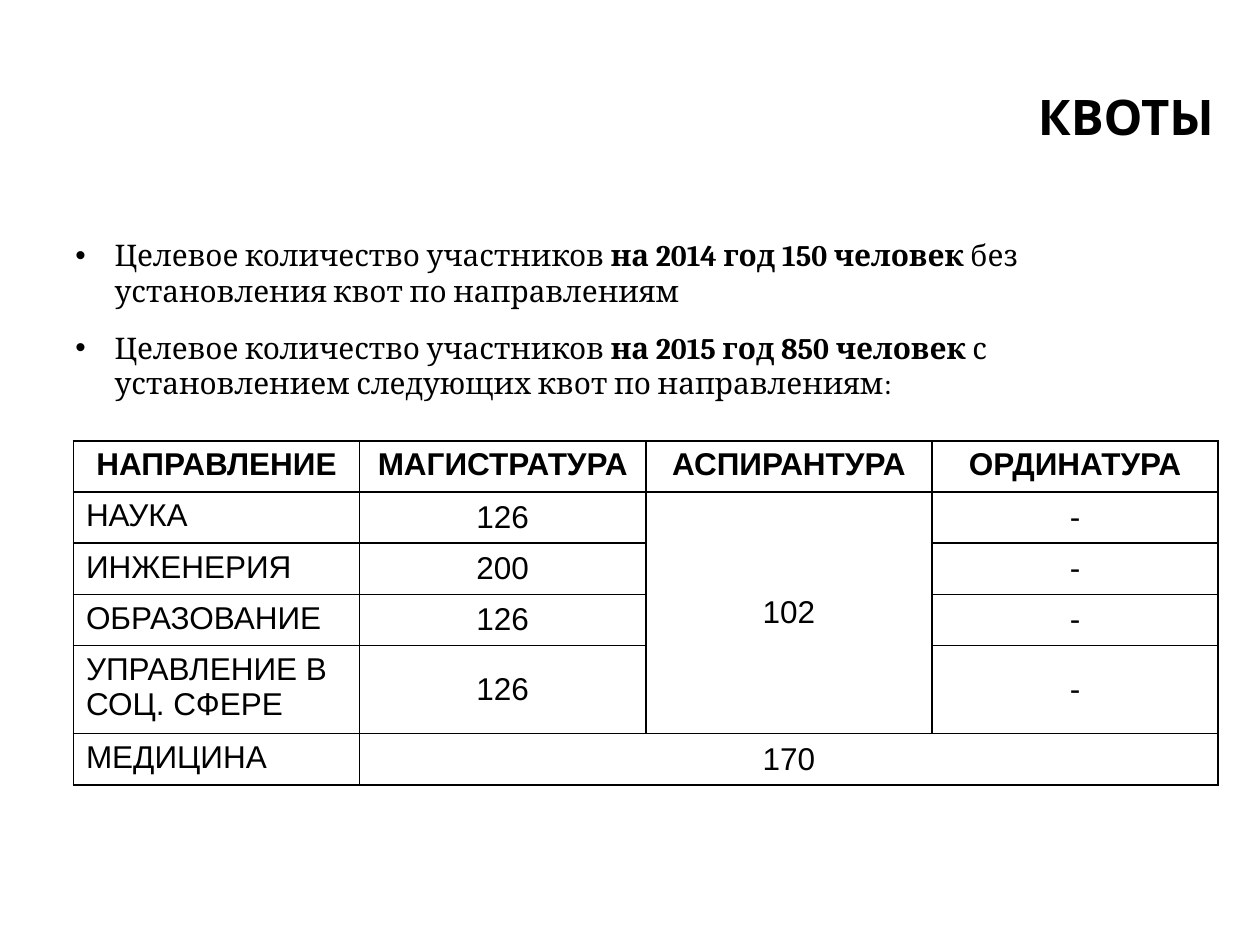
from lxml import etree
from pptx import Presentation
from pptx.dml.color import RGBColor
from pptx.enum import text
from pptx.oxml import ns
from pptx.util import Cm, Pt

BLACK = RGBColor(0, 0, 0)
LEFT, CENTER, RIGHT = text.PP_ALIGN.LEFT, text.PP_ALIGN.CENTER, text.PP_ALIGN.RIGHT

TITLE = "КВОТЫ"
BULLETS = [
    [("Целевое количество участников ", False),
     ("на 2014 год 150 человек ", True),
     ("без установления квот по направлениям", False)],
    [("Целевое количество участников ", False),
     ("на 2015 год 850 человек ", True),
     ("с установлением следующих квот по направлениям:", False)],
]
QUOTAS = [
    ["НАПРАВЛЕНИЕ", "МАГИСТРАТУРА", "АСПИРАНТУРА", "ОРДИНАТУРА"],
    ["НАУКА", "126", "102", "-"],
    ["ИНЖЕНЕРИЯ", "200", "", "-"],
    ["ОБРАЗОВАНИЕ", "126", "", "-"],
    ["УПРАВЛЕНИЕ В СОЦ. СФЕРЕ", "126", "", "-"],
    ["МЕДИЦИНА", "170", "", ""],
]
MERGES = [((1, 2), (4, 2)), ((5, 1), (5, 3))]
ROW_HEIGHTS = [1.03, 1.03, 1.03, 1.03, 1.78, 1.03]
COLUMN_WIDTH = 5.77


def add_span(para, words, font, size, bold):
    span = para.add_run()
    span.text = words
    span.font.name = font
    span.font.size = Pt(size)
    span.font.bold = bold
    span.font.color.rgb = BLACK


def add_box(page, left, top, width, height):
    frame = page.shapes.add_textbox(Cm(left), Cm(top), Cm(width), Cm(height)).text_frame
    frame.word_wrap = True
    return frame


def add_bullet(para):
    props = para._p.get_or_add_pPr()
    props.set("marL", str(Cm(0.79)))
    props.set("indent", str(-Cm(0.79)))
    etree.SubElement(props, ns.qn("a:buFont")).set("typeface", "Arial")
    etree.SubElement(props, ns.qn("a:buChar")).set("char", "•")


def add_borders(cell):
    props = cell._tc.get_or_add_tcPr()
    for index, side in enumerate(("lnL", "lnR", "lnT", "lnB")):
        line = etree.Element(ns.qn("a:" + side), w=str(Pt(1)))
        fill = etree.SubElement(line, ns.qn("a:solidFill"))
        etree.SubElement(fill, ns.qn("a:srgbClr")).set("val", str(BLACK))
        props.insert(index, line)


def add_title(page):
    frame = add_box(page, 5.72, 1.57, 19, 1.55)
    frame.vertical_anchor = text.MSO_ANCHOR.MIDDLE
    para = frame.paragraphs[0]
    para.alignment = RIGHT
    add_span(para, TITLE, "Cabin", 28, True)


def add_bullets(page):
    frame = add_box(page, 1.27, 4.65, 23.29, 3.58)
    for index, spans in enumerate(BULLETS):
        para = frame.add_paragraph() if index else frame.paragraphs[0]
        para.space_before = Pt(6 if index else 0)
        para.space_after = Pt(6)
        add_bullet(para)
        for words, bold in spans:
            add_span(para, words, "Cambria", 17, bold)


def add_quotas(page):
    rows, columns = len(QUOTAS), len(QUOTAS[0])
    table = page.shapes.add_table(rows, columns, Cm(1.48), Cm(8.89),
                                  Cm(COLUMN_WIDTH * columns), Cm(sum(ROW_HEIGHTS))).table
    for column in table.columns:
        column.width = Cm(COLUMN_WIDTH)
    for row, height in zip(table.rows, ROW_HEIGHTS):
        row.height = Cm(height)
    for r, values in enumerate(QUOTAS):
        for c, value in enumerate(values):
            cell = table.cell(r, c)
            cell.fill.background()
            add_borders(cell)
            if r and c:
                cell.vertical_anchor = text.MSO_ANCHOR.MIDDLE
            if value:
                para = cell.text_frame.paragraphs[0]
                para.alignment = LEFT if r and not c else CENTER
                add_span(para, value, "Arial", 18, r == 0)
    for first, last in MERGES:
        table.cell(*first).merge(table.cell(*last))


def main():
    deck = Presentation()
    deck.slide_width, deck.slide_height = Cm(25.4), Cm(19.05)
    page = deck.slides.add_slide(deck.slide_layouts[6])
    add_title(page)
    add_bullets(page)
    add_quotas(page)
    deck.save("out.pptx")


if __name__ == "__main__":
    main()
